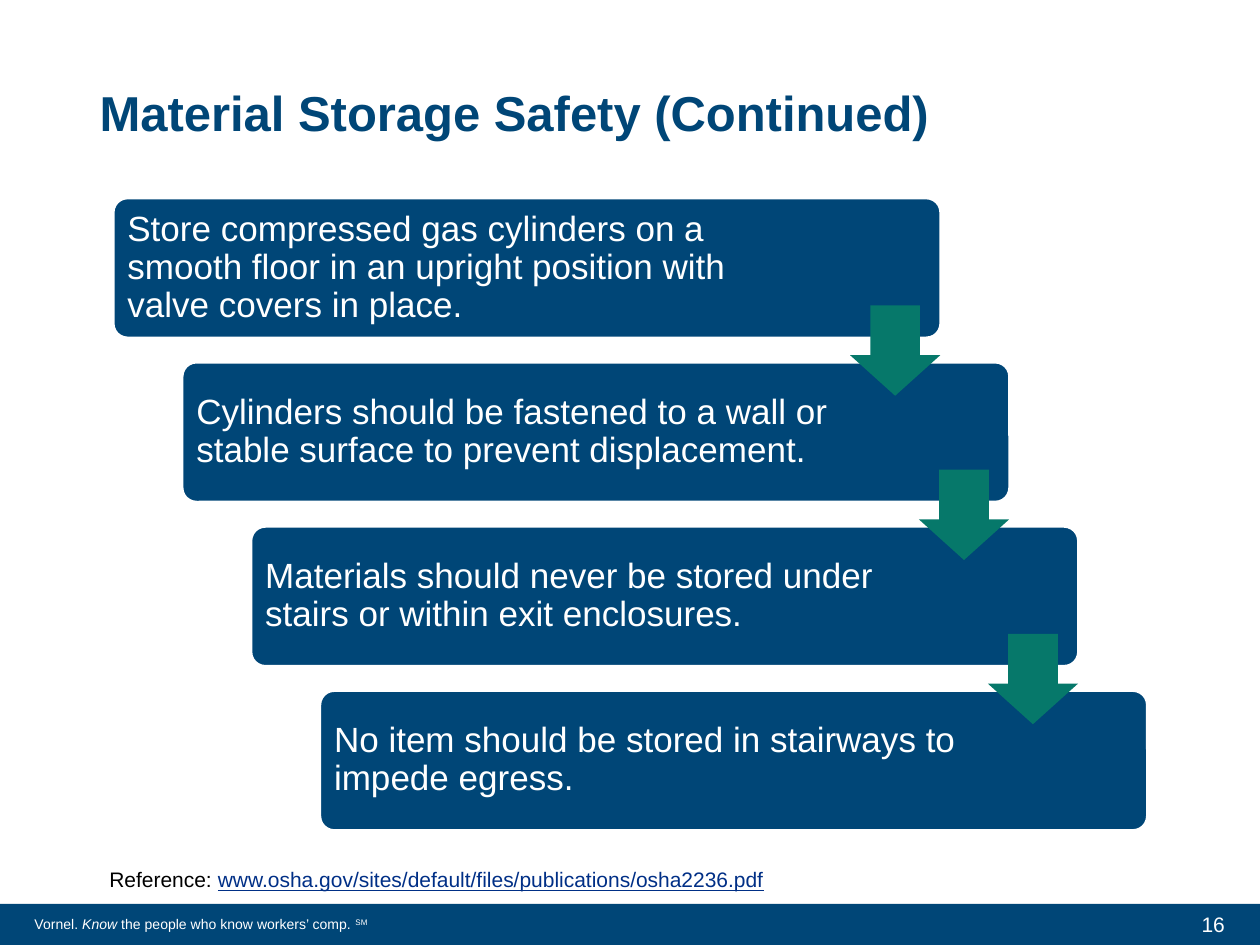
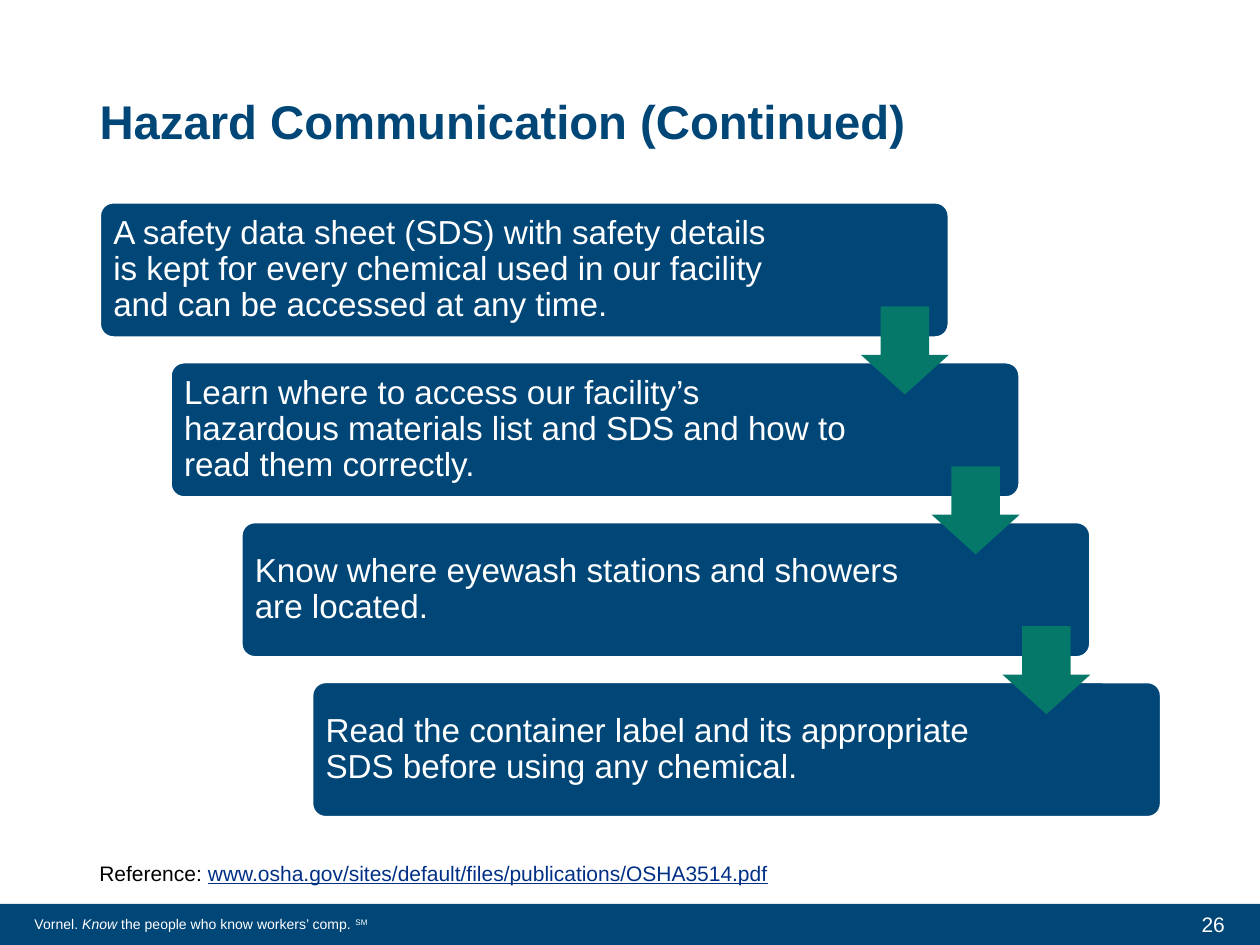
from collections import namedtuple

from pptx import Presentation
from pptx.dml.color import RGBColor
from pptx.enum.shapes import MSO_SHAPE as Shape
from pptx.enum.text import MSO_ANCHOR as Anchor, MSO_AUTO_SIZE as AutoSize, PP_ALIGN as Align
from pptx.util import Pt

NAVY = RGBColor(0x00, 0x46, 0x77)
GREEN = RGBColor(0x06, 0x78, 0x6A)
LINK = RGBColor(0x00, 0x2F, 0x86)
WHITE = RGBColor(0xFF, 0xFF, 0xFF)
BLACK = RGBColor(0x00, 0x00, 0x00)
FONT = "Arial"
TITLE_ONLY = 5

Box = namedtuple("Box", "left top width height")
BAND = Box(0, 516.5, 720, 23.5)

SLIDES = [
    dict(
        title="Material Storage Safety (Continued)",
        title_box=Box(49.7, 1.4, 630, 83.5),
        title_size=28,
        steps=[
            "Store compressed gas cylinders on a smooth floor in an upright position with "
            "valve covers in place.",
            "Cylinders should be fastened to a wall or stable surface to prevent displacement.",
            "Materials should never be stored under stairs or within exit enclosures.",
            "No item should be stored in stairways to impede egress.",
        ],
        steps_box=Box(65, 113.4, 590.4, 360.9),
        step_size=20,
        outline=1,
        link="www.osha.gov/sites/default/files/publications/osha2236.pdf",
        reference_box=Box(55.4, 494.6, 432.7, 18.7),
        reference_spacing=0.8,
        number="16",
    ),
    dict(
        title="Hazard Communication (Continued)",
        title_box=Box(49.7, 19.4, 545, 69.8),
        title_size=27,
        steps=[
            "A safety data sheet (SDS) with safety details is kept for every chemical used in "
            "our facility and can be accessed at any time.",
            "Learn where to access our facility’s hazardous materials list and SDS and how to "
            "read them correctly.",
            "Know where eyewash stations and showers are located.",
            "Read the container label and its appropriate SDS before using any chemical.",
        ],
        steps_box=Box(57, 115.6, 606.5, 351.4),
        step_size=19,
        outline=1.5,
        link="www.osha.gov/sites/default/files/publications/OSHA3514.pdf",
        reference_box=Box(49.7, 489.6, 483, 33.8),
        reference_spacing=0.9,
        number="26",
    ),
]


def points(box):
    """Return the four lengths of a box in points."""
    return [Pt(length) for length in box]


def add_span(para, text, size, color, bold=False, italic=None, underline=None):
    """Add one formatted run to a paragraph."""
    span = para.add_run()
    span.text = text
    font = span.font
    font.name, font.size, font.color.rgb = FONT, Pt(size), color
    font.bold, font.italic, font.underline = bold, italic, underline
    return span


def add_text_box(page, box, anchor=Anchor.TOP):
    """Add a wrapping text box and return its first paragraph."""
    frame = page.shapes.add_textbox(*points(box)).text_frame
    frame.word_wrap = True
    frame.vertical_anchor = anchor
    return frame.paragraphs[0]


def add_solid(page, kind, box, fill, outline=0):
    """Add a flat preset shape with an optional white outline."""
    shape = page.shapes.add_shape(kind, *points(box))
    shape.shadow.inherit = False
    shape.fill.solid()
    shape.fill.fore_color.rgb = fill
    if outline:
        shape.line.color.rgb = WHITE
        shape.line.width = Pt(outline)
    else:
        shape.line.fill.background()
    return shape


def set_title(page, box, text, size):
    """Place and format the title placeholder."""
    title = page.shapes.title
    title.left, title.top, title.width, title.height = points(box)
    frame = title.text_frame
    frame.auto_size = AutoSize.NONE
    frame.word_wrap = True
    frame.vertical_anchor = Anchor.BOTTOM
    para = frame.paragraphs[0]
    para.alignment = Align.LEFT
    para.line_spacing = 0.9
    add_span(para, text, size, NAVY, bold=True)


def add_footer(page, band, number):
    """Draw the footer band with its slogan and page number."""
    add_solid(page, Shape.RECTANGLE, band, NAVY)
    slogan = add_text_box(page, Box(band.left + 12.6, band.top + 3.3, 250, 26.6))
    add_span(slogan, "Vornel. ", 8, WHITE)
    add_span(slogan, "Know", 8, WHITE, italic=True)
    add_span(slogan, " the people who know workers’ comp. ", 8, WHITE)
    mark = add_span(slogan, "SM", 8, WHITE)
    mark._r.get_or_add_rPr().set("baseline", "30000")
    number_box = Box(band.left + band.width - 175, band.top - 3.1, 162, 28.8)
    para = add_text_box(page, number_box, Anchor.MIDDLE)
    para.alignment = Align.RIGHT
    add_span(para, number, 12, WHITE)


def add_reference(page, box, link, spacing):
    """Write the source line below the steps."""
    para = add_text_box(page, box)
    para.line_spacing = spacing
    para.space_before = Pt(10)
    add_span(para, "Reference: ", 12, BLACK)
    add_span(para, link, 12, LINK, underline=True)


def add_card(page, box, text, size, outline):
    """Draw one rounded step card, keeping its right end free for the arrow."""
    card = add_solid(page, Shape.ROUNDED_RECTANGLE, box, NAVY, outline)
    card.adjustments[0] = 0.1
    frame = card.text_frame
    frame.word_wrap = True
    frame.vertical_anchor = Anchor.MIDDLE
    frame.margin_left = frame.margin_top = frame.margin_bottom = Pt(5.5)
    frame.margin_right = Pt(95)
    para = frame.paragraphs[0]
    para.alignment = Align.LEFT
    para.line_spacing = 0.9
    add_span(para, text, size, WHITE)


def add_staircase(page, box, steps, size, outline):
    """Draw descending cards across the box, joined by down arrows."""
    width, height = box.width * 0.8, box.height * 0.22
    gaps = len(steps) - 1
    shift, drop = (box.width - width) / gaps, (box.height - height) / gaps
    cards = [
        Box(box.left + index * shift, box.top + index * drop, width, height)
        for index in range(len(steps))
    ]
    for card, text in zip(cards, steps):
        add_card(page, card, text, size, outline)
    side = height * 0.65
    for card in cards[:-1]:
        arrow_box = Box(card.left + width - side, card.top + height * 0.77, side, side)
        arrow = add_solid(page, Shape.DOWN_ARROW, arrow_box, GREEN)
        arrow.adjustments[0] = 0.55
        arrow.adjustments[1] = 0.45


def add_steps_slide(deck, content):
    """Build one slide of descending steps."""
    page = deck.slides.add_slide(deck.slide_layouts[TITLE_ONLY])
    add_footer(page, BAND, content["number"])
    set_title(page, content["title_box"], content["title"], content["title_size"])
    add_reference(page, content["reference_box"], content["link"], content["reference_spacing"])
    add_staircase(
        page, content["steps_box"], content["steps"], content["step_size"], content["outline"]
    )


def main():
    """Build and save the deck."""
    deck = Presentation()
    deck.slide_width, deck.slide_height = Pt(720), Pt(540)
    for content in SLIDES:
        add_steps_slide(deck, content)
    deck.save("out.pptx")


if __name__ == "__main__":
    main()
